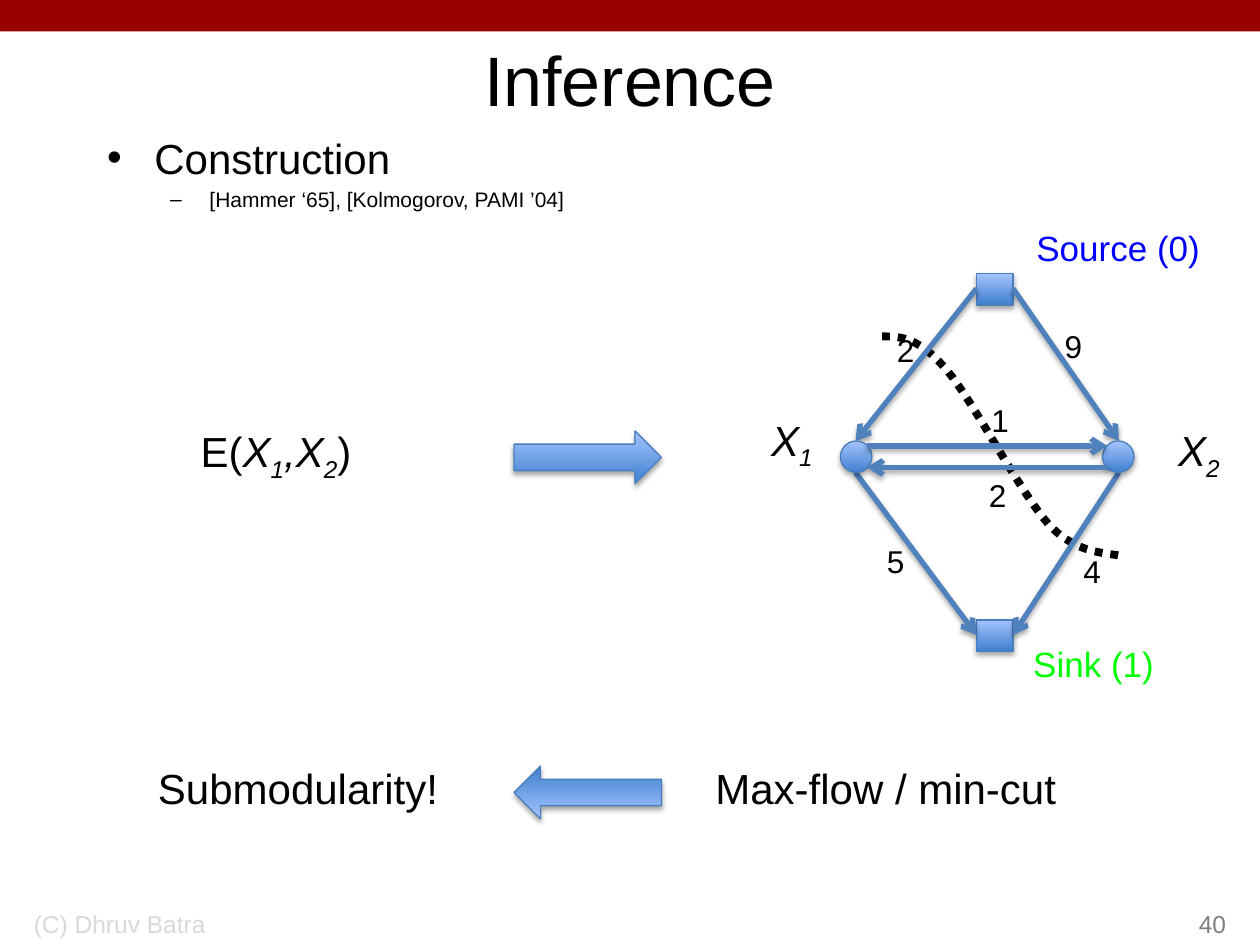
from pptx import Presentation
from pptx.dml.color import RGBColor
from pptx.enum.dml import MSO_LINE_DASH_STYLE as Dash
from pptx.enum.shapes import MSO_CONNECTOR as Connector, MSO_SHAPE as Shape
from pptx.enum.text import MSO_ANCHOR as Anchor, MSO_AUTO_SIZE as AutoSize, PP_ALIGN as Align
from pptx.oxml.xmlchemy import OxmlElement
from pptx.util import Inches, Pt

COLORS = {
    "bar": "990000", "black": "000000", "footer": "D9D9D9", "number": "808080",
    "source": "0000FF", "sink": "00FF00", "edge": "4F81BD", "outline": "4B7EBC",
    "dark": "3F80CE", "light": "A4C4FF",
}


def rgb(name):
    return RGBColor.from_string(COLORS[name])


def child(parent, tag, **attributes):
    element = OxmlElement(tag)
    for name, value in attributes.items():
        element.set(name, str(value))
    parent.append(element)
    return element


class SlideBuilder:
    font = "Arial"

    def __init__(self, slide):
        self.slide = slide
        self.shapes = slide.shapes

    def run(self, paragraph, text, size, color="black", italic=False, subscript=False):
        run = paragraph.add_run()
        run.text = text
        run.font.name, run.font.size = self.font, Pt(size)
        run.font.color.rgb = rgb(color)
        if italic:
            run.font.italic = True
        if subscript:
            run._r.get_or_add_rPr().set("baseline", "-25000")

    def placeholder(self, index, box, lines):
        """Fill a placeholder with (text, size, level) lines."""
        shape = self.slide.placeholders[index]
        shape.left, shape.top, shape.width, shape.height = map(Inches, box)
        frame = shape.text_frame
        frame.auto_size = AutoSize.NONE
        for number, (text, size, level) in enumerate(lines):
            paragraph = frame.add_paragraph() if number else frame.paragraphs[0]
            paragraph.level = level
            if not number:
                paragraph.space_before = Pt(0)
            self.run(paragraph, text, size)

    def text(self, box, runs, size, color="black", align=Align.CENTER, wrap=False, footer=False):
        """Add a text box; runs holds (text, italic, subscript)."""
        frame = self.shapes.add_textbox(*map(Inches, box)).text_frame
        frame.word_wrap = wrap
        frame.auto_size = AutoSize.NONE if footer else AutoSize.SHAPE_TO_FIT_TEXT
        frame.vertical_anchor = Anchor.BOTTOM if footer else Anchor.TOP
        paragraph = frame.paragraphs[0]
        paragraph.alignment = align
        if isinstance(runs, str):
            runs = [(runs, False, False)]
        for content, italic, subscript in runs:
            self.run(paragraph, content, size, color, italic, subscript)

    def shadow(self, shape):
        effects = child(shape._element.spPr, "a:effectLst")
        outer = child(effects, "a:outerShdw", blurRad=Pt(3.1), dist=Pt(1.8),
                      dir=5400000, rotWithShape=0)
        child(child(outer, "a:srgbClr", val=COLORS["black"]), "a:alpha", val=35000)

    def bar(self, box):
        shape = self.shapes.add_shape(Shape.RECTANGLE, *map(Inches, box))
        shape.shadow.inherit = False
        shape.fill.solid()
        shape.fill.fore_color.rgb = rgb("bar")
        shape.line.fill.background()

    def glossy(self, kind, box, rotation=0):
        shape = self.shapes.add_shape(kind, *map(Inches, box))
        shape.rotation = rotation
        shape.fill.gradient()
        shape.fill.gradient_angle = 90
        for stop, color in zip(shape.fill.gradient_stops, ("dark", "light")):
            stop.color.rgb = rgb(color)
            stop.position = 0 if color == "dark" else 1
        shape.line.color.rgb = rgb("outline")
        shape.line.width = Pt(0.75)
        self.shadow(shape)

    def edge(self, start, end):
        line = self.shapes.add_connector(Connector.STRAIGHT, *map(Inches, start + end))
        line.line.color.rgb = rgb("edge")
        line.line.width = Pt(3)
        child(line.line._get_or_add_ln(), "a:tailEnd", type="arrow")
        self.shadow(line)

    def dotted_curve(self, start, segments, steps=12):
        """Draw cubic Bezier segments as one dotted outline."""
        points, origin = [], start
        for first, second, end in segments:
            for step in range(1, steps + 1):
                t = step / steps
                u = 1 - t
                points.append(tuple(
                    Inches(u**3 * a + 3 * u * u * t * b + 3 * u * t * t * c + t**3 * d)
                    for a, b, c, d in zip(origin, first, second, end)))
            origin = end
        builder = self.shapes.build_freeform(*map(Inches, start))
        builder.add_line_segments(points, close=False)
        shape = builder.convert_to_shape()
        shape.shadow.inherit = False
        shape.fill.background()
        shape.line.color.rgb = rgb("black")
        shape.line.width = Pt(4.5)
        shape.line.dash_style = Dash.ROUND_DOT


def variable(number):
    return [("X", True, False), (number, True, True)]


def main():
    presentation = Presentation()
    presentation.slide_width, presentation.slide_height = Inches(10), Inches(7.5)
    builder = SlideBuilder(presentation.slides.add_slide(presentation.slide_layouts[1]))

    # Header, list and footer
    builder.bar((0, 0, 10, 0.25))
    builder.placeholder(0, (0.75, 0.25, 8.5, 0.75), [("Inference", 40, 0)])
    builder.placeholder(1, (0.75, 1, 8.5, 6), [
        ("Construction", 24, 0), ("[Hammer ‘65], [Kolmogorov, PAMI ’04]", 12, 1)])
    builder.text((0.17, 7, 3.17, 0.5), "(C) Dhruv Batra", 14, "footer", Align.LEFT, True, True)
    builder.text((7.75, 7, 2.08, 0.5), "40", 14, "number", Align.RIGHT, True, True)

    # Statements and the block arrows between them
    energy = [("E(", False, False), ("X", True, False), ("1", True, True),
              (",X", True, False), ("2", True, True), (") ", False, False)]
    builder.text((1.47, 3.33, 1.44, 0.5), energy, 24)
    builder.text((5.56, 6, 2.94, 0.5), "Max-flow / min-cut", 24)
    builder.text((1.14, 6, 2.45, 0.5), "Submodularity!", 24)
    for top, rotation in ((3.42, 0), (6.08, 180)):
        builder.glossy(Shape.RIGHT_ARROW, (4.08, top, 1.17, 0.42), rotation)

    # Cut through the graph
    builder.dotted_curve((7, 2.67), [
        ((7.14, 2.67), (7.28, 2.67), (7.5, 2.92)),
        ((7.72, 3.17), (8.1, 3.92), (8.33, 4.17)),
        ((8.57, 4.42), (8.82, 4.38), (8.92, 4.42))])

    # Graph labels
    builder.text((8.09, 1.75, 1.57, 0.43), "Source (0) ", 20, "source")
    builder.text((8.1, 5.05, 1.16, 0.43), "Sink (1)", 20, "sink")
    builder.text((5.97, 3.24, 0.63, 0.5), variable("1"), 24, wrap=True)
    builder.text((9.2, 3.32, 0.63, 0.5), variable("2"), 24, wrap=True)
    weights = (("2", 7.02, 2.58), ("9", 8.35, 2.55), ("1", 7.77, 3.13),
               ("2", 7.75, 3.73), ("5", 6.94, 4.25), ("4", 8.5, 4.33))
    for weight, left, top in weights:
        builder.text((left, top, 0.31, 0.37), weight, 18)

    # Terminals, and the edges joining them to the variables
    for top in (2.17, 4.92):
        builder.glossy(Shape.RECTANGLE, (7.75, top, 0.29, 0.25))
    for terminal_x, variable_x in ((7.75, 6.79), (8.04, 8.88)):
        builder.edge((terminal_x, 2.29), (variable_x, 3.5))
        builder.edge((variable_x, 3.75), (terminal_x, 5.04))

    # Variables, and the edges between them
    for left in (6.67, 8.75):
        builder.glossy(Shape.OVAL, (left, 3.5, 0.25, 0.25))
    builder.edge((6.88, 3.54), (8.79, 3.54))
    builder.edge((8.79, 3.71), (6.88, 3.71))

    presentation.save("out.pptx")


if __name__ == "__main__":
    main()
